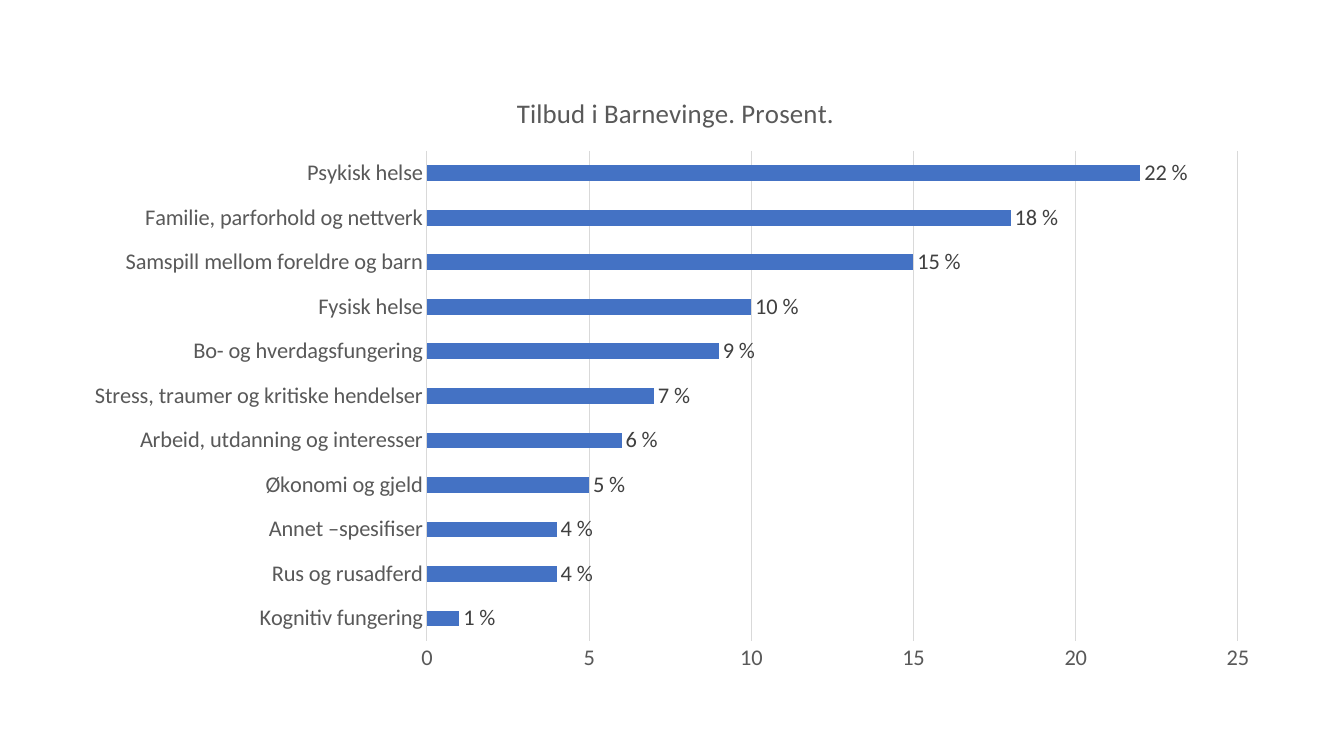
from lxml import etree
from pptx import Presentation
from pptx.chart.data import CategoryChartData
from pptx.dml.color import RGBColor
from pptx.enum.chart import XL_CHART_TYPE, XL_LABEL_POSITION, XL_TICK_MARK
from pptx.oxml.ns import qn
from pptx.util import Pt

BAR = XL_CHART_TYPE.BAR_CLUSTERED
OUTSIDE_END = XL_LABEL_POSITION.OUTSIDE_END
NO_TICK = XL_TICK_MARK.NONE

EMU_PER_PX = 914400 / 100.8
SLIDE_SIZE = (1344, 756)
CHART_BOX = (71, 71, 1203, 614)
PLOT_BOX = (427, 151, 811, 490)
TITLE_POS = (512, 89)
FONT = "Calibri"
GREY = "595959"
LIGHT_GREY = "D9D9D9"
TITLE = "Tilbud i Barnevinge. Prosent."
OFFERS = [
    ("Kognitiv fungering", 1),
    ("Rus og rusadferd", 4),
    ("Annet –spesifiser", 4),
    ("Økonomi og gjeld", 5),
    ("Arbeid, utdanning og interesser", 6),
    ("Stress, traumer og kritiske hendelser", 7),
    ("Bo- og hverdagsfungering", 9),
    ("Fysisk helse", 10),
    ("Samspill mellom foreldre og barn", 15),
    ("Familie, parforhold og nettverk", 18),
    ("Psykisk helse", 22),
]


def px(n):
    return round(n * EMU_PER_PX)


def color(value):
    return RGBColor.from_string(value)


def style_font(font, size, value):
    font.name = FONT
    font.size = Pt(size)
    font.bold = False
    font.color.rgb = color(value)


def style_line(line):
    line.color.rgb = color(LIGHT_GREY)
    line.width = Pt(0.75)


def style_axis(axis):
    axis.major_tick_mark = axis.minor_tick_mark = NO_TICK
    style_font(axis.tick_labels.font, 16, GREY)


def place(parent, box, inner=False):
    layout = parent.find(qn("c:layout"))
    if layout is None:
        layout = etree.Element(qn("c:layout"))
        if inner:
            parent.insert(0, layout)
        else:
            parent.find(qn("c:tx")).addnext(layout)
    for child in list(layout):
        layout.remove(child)
    left, top, width, height = CHART_BOX
    fractions = [(box[0] - left) / width, (box[1] - top) / height]
    settings = [("xMode", "edge"), ("yMode", "edge")]
    if inner:
        settings.insert(0, ("layoutTarget", "inner"))
        fractions += [box[2] / width, box[3] / height]
    settings += [(name, f"{f:.4f}") for name, f in zip("xywh", fractions)]
    manual = etree.SubElement(layout, qn("c:manualLayout"))
    for name, value in settings:
        etree.SubElement(manual, qn(f"c:{name}")).set("val", value)


def add_title(chart):
    tf = chart.chart_title.text_frame
    tf.text = TITLE
    style_font(tf.paragraphs[0].font, 19.2, GREY)
    chart.chart_title.include_in_layout = False
    place(chart.chart_title._element, TITLE_POS)


def style_bars(plot):
    plot.gap_width = 182
    plot.vary_by_categories = False
    fill = plot.series[0].format.fill
    fill.solid()
    fill.fore_color.rgb = color("4472C4")
    plot.has_data_labels = True
    labels = plot.data_labels
    labels.show_value = True
    labels.position = OUTSIDE_END
    labels.number_format = '0" %"'
    labels.number_format_is_linked = False
    style_font(labels.font, 16, "404040")


def add_bar_chart(s):
    data = CategoryChartData(number_format="0")
    data.categories = [name for name, _ in OFFERS]
    data.add_series("Prosent", [value for _, value in OFFERS])
    chart = s.shapes.add_chart(BAR, *map(px, CHART_BOX), data).chart
    chart.has_legend = False
    style_font(chart.font, 16, "000000")
    add_title(chart)
    style_bars(chart.plots[0])

    style_axis(chart.category_axis)
    style_line(chart.category_axis.format.line)

    axis = chart.value_axis
    style_axis(axis)
    axis.minimum_scale, axis.maximum_scale, axis.major_unit = 0, 25, 5
    axis.tick_labels.number_format = "0"
    axis.tick_labels.number_format_is_linked = False
    axis.format.line.fill.background()
    axis.has_major_gridlines = True
    style_line(axis.major_gridlines.format.line)
    place(chart._chartSpace.chart.plotArea, PLOT_BOX, inner=True)


def main():
    prs = Presentation()
    prs.slide_width, prs.slide_height = map(px, SLIDE_SIZE)
    s = prs.slides.add_slide(prs.slide_layouts[6])
    add_bar_chart(s)
    prs.save("out.pptx")


if __name__ == "__main__":
    main()
